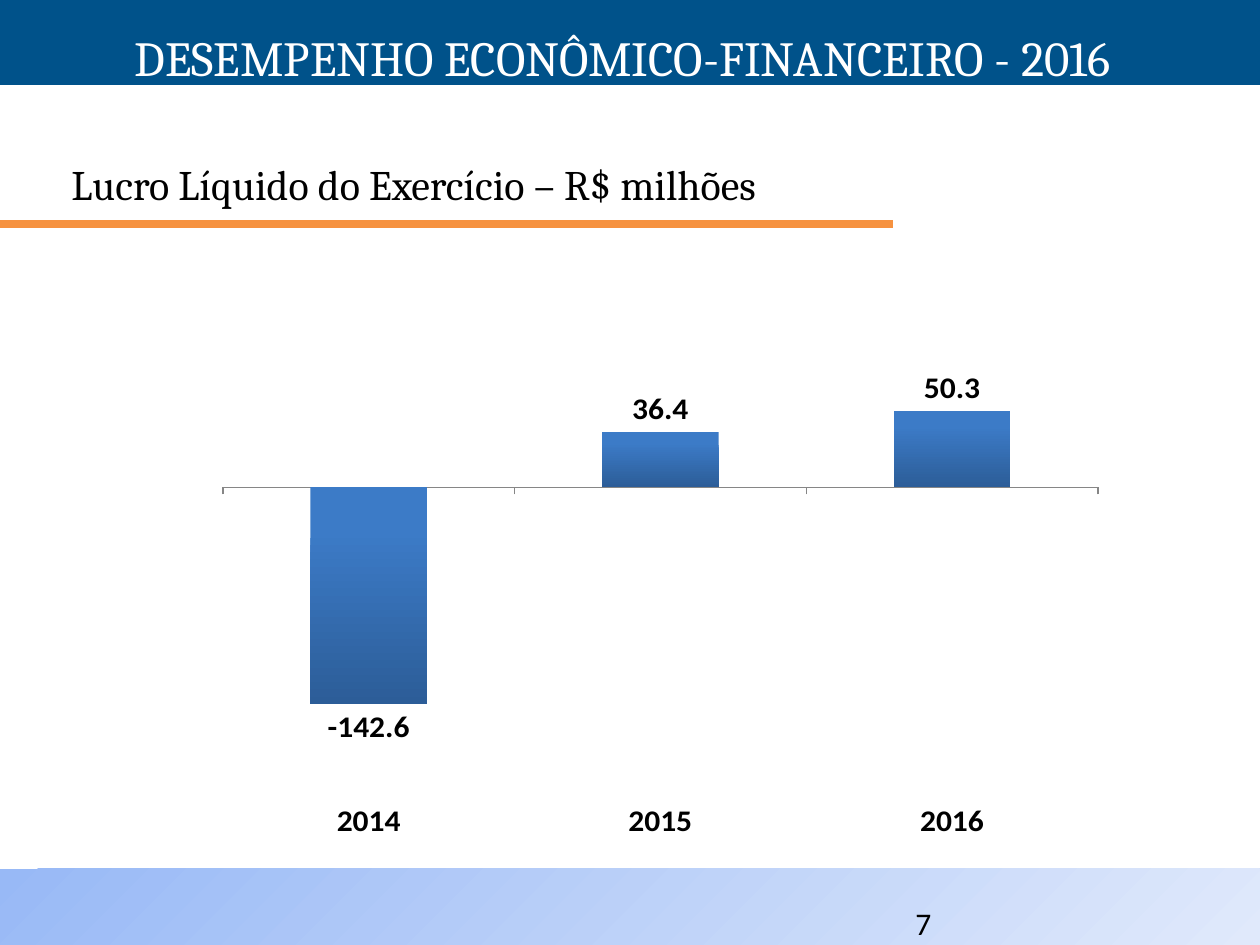
from lxml.etree import SubElement
from pptx import Presentation
from pptx.chart.data import CategoryChartData
from pptx.dml.color import RGBColor
from pptx.enum.chart import (XL_CHART_TYPE as ChartType, XL_LABEL_POSITION as LabelPos,
                             XL_TICK_LABEL_POSITION as TickLabelPos, XL_TICK_MARK as TickMark)
from pptx.enum.shapes import MSO_CONNECTOR as Connector, MSO_SHAPE as Shape
from pptx.enum.text import MSO_ANCHOR as Anchor, PP_ALIGN as Align
from pptx.oxml import parse_xml
from pptx.oxml.ns import nsdecls, qn
from pptx.util import Emu, Pt

BLACK = RGBColor(0x00, 0x00, 0x00)
WHITE = RGBColor(0xFF, 0xFF, 0xFF)
NAVY = RGBColor(0x00, 0x52, 0x8A)
ORANGE = RGBColor(0xF6, 0x92, 0x40)
GREY = RGBColor(0x86, 0x86, 0x86)
FOOTER_STOPS = [(0, RGBColor(0x98, 0xB9, 0xF6)), (1, RGBColor(0xE0, 0xE9, 0xFB))]
BAR_STOPS = [(0.2, RGBColor(0x3C, 0x7B, 0xC7)), (1, RGBColor(0x2C, 0x5D, 0x98))]

WIDTH, HEIGHT = 1260, 945
PROFITS = {"2014": -142.6, "2015": 36.4, "2016": 50.3}
PLOT_LAYOUT = {"x": 0.031, "y": 0.101, "w": 0.939, "h": 0.862}

# text, box in px, alignment, anchor, font
TEXTS = [
    ("Lucro Líquido do Exercício – R$ milhões", (59, 145, 1138, 78), Align.LEFT, Anchor.MIDDLE,
     {"name": "Cambria", "size": Pt(24), "color": BLACK}),
    ("7", (903, 898, 294, 50), Align.LEFT, Anchor.TOP,
     {"name": "Calibri", "size": Pt(18), "color": BLACK}),
    ("DESEMPENHO ECONÔMICO-FINANCEIRO - 2016", (5, 21, 1235, 72), Align.CENTER, Anchor.TOP,
     {"name": "Cambria", "size": Pt(28), "color": WHITE}),
]
CHART_FONT = {"name": "Calibri", "size": Pt(18), "bold": True, "color": BLACK}


def px(*lengths):
    return [Emu(round(length * 914400 / 126)) for length in lengths]


def set_font(font, values):
    for key, value in values.items():
        if key == "color":
            font.color.rgb = value
        else:
            setattr(font, key, value)


def set_gradient(fill, stops, angle):
    fill.gradient()
    fill.gradient_angle = angle
    for stop, (position, color) in zip(fill.gradient_stops, stops):
        stop.position = position
        stop.color.rgb = color


def add_band(slide, box):
    band = slide.shapes.add_shape(Shape.RECTANGLE, *px(*box))
    band.shadow.inherit = False
    band.line.fill.background()
    return band


def add_rule(slide, x1, x2, y):
    rule = slide.shapes.add_connector(Connector.STRAIGHT, *px(x1, y, x2, y))
    rule.line.color.rgb = ORANGE
    rule.line.width = Pt(4.5)
    SubElement(rule._element.spPr, qn("a:effectLst"))


def add_text(slide, text, box, alignment, anchor, font):
    frame = slide.shapes.add_textbox(*px(*box)).text_frame
    frame.word_wrap = True
    frame.vertical_anchor = anchor
    paragraph = frame.paragraphs[0]
    paragraph.alignment = alignment
    run = paragraph.add_run()
    run.text = text
    set_font(run.font, font)


def fix_plot_area(chart):
    """Place the inner plot area by fractions of the chart."""
    fractions = "".join(f'<c:{key} val="{value}"/>' for key, value in PLOT_LAYOUT.items())
    layout = parse_xml(
        f'<c:layout {nsdecls("c")}><c:manualLayout><c:layoutTarget val="inner"/>'
        f'<c:xMode val="edge"/><c:yMode val="edge"/>{fractions}</c:manualLayout></c:layout>')
    plot_area = chart._chartSpace.chart.plotArea
    for old in plot_area.findall(qn("c:layout")):
        plot_area.remove(old)
    plot_area.insert(0, layout)


def add_profit_chart(slide):
    data = CategoryChartData(number_format="0.0")
    data.categories = list(PROFITS)
    data.add_series("Series 1", list(PROFITS.values()))
    chart = slide.shapes.add_chart(
        ChartType.COLUMN_CLUSTERED, *px(194, 282, 932, 557), data).chart
    chart.has_legend = chart.has_title = False
    set_font(chart.font, CHART_FONT)
    fix_plot_area(chart)

    years = chart.category_axis
    years.tick_label_position = TickLabelPos.LOW
    years.major_tick_mark = TickMark.OUTSIDE
    years.format.line.color.rgb = GREY
    set_font(years.tick_labels.font, CHART_FONT)

    amounts = chart.value_axis
    amounts.visible = amounts.has_major_gridlines = False
    amounts.minimum_scale, amounts.maximum_scale = -200, 100

    plot = chart.plots[0]
    plot.gap_width = 150
    plot.vary_by_categories = False
    profit = plot.series[0]
    profit.invert_if_negative = False
    set_gradient(profit.format.fill, BAR_STOPS, 270)
    labels = profit.data_labels
    labels.show_value = True
    labels.number_format, labels.number_format_is_linked = "0.0", False
    labels.position = LabelPos.OUTSIDE_END
    set_font(labels.font, CHART_FONT)


def main():
    prs = Presentation()
    prs.slide_width, prs.slide_height = px(WIDTH, HEIGHT)
    slide = prs.slides.add_slide(prs.slide_layouts[6])

    footer = add_band(slide, (0, 869, WIDTH, HEIGHT - 869))
    set_gradient(footer.fill, FOOTER_STOPS, 315)
    header = add_band(slide, (0, 0, WIDTH, 85))
    header.fill.solid()
    header.fill.fore_color.rgb = NAVY

    add_rule(slide, 0, 893, 224)
    add_profit_chart(slide)
    for text in TEXTS:
        add_text(slide, *text)
    prs.save("out.pptx")


if __name__ == "__main__":
    main()
